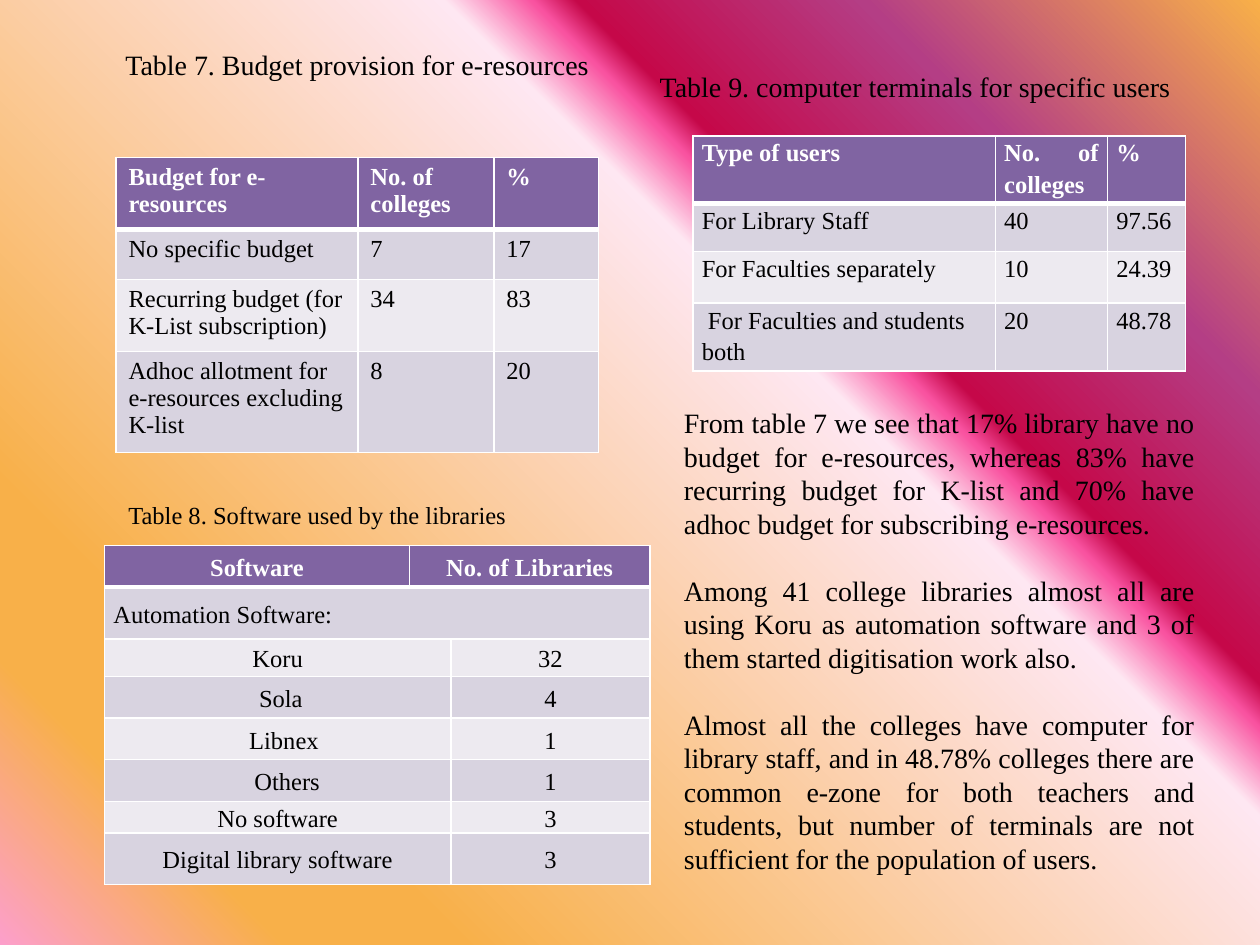
from lxml import etree
from pptx import Presentation
from pptx import util as u
from pptx.dml.color import RGBColor
from pptx.enum import text
from pptx.oxml import ns

Inches, Pt = u.Inches, u.Pt
LEFT, CENTER, JUSTIFY = text.PP_ALIGN.LEFT, text.PP_ALIGN.CENTER, text.PP_ALIGN.JUSTIFY

BLACK = RGBColor(0x00, 0x00, 0x00)
WHITE = RGBColor(0xFF, 0xFF, 0xFF)
PURPLE = RGBColor(0x80, 0x64, 0xA2)
BAND_DARK = RGBColor(0xD8, 0xD3, 0xE0)
BAND_LIGHT = RGBColor(0xED, 0xEA, 0xF0)
PINK = RGBColor(0xFC, 0x9F, 0xCB)
ORANGE = RGBColor(0xF8, 0xB0, 0x49)
PALE_PINK = RGBColor(0xFE, 0xE7, 0xF2)
HOT_PINK = RGBColor(0xF9, 0x52, 0xA0)
CRIMSON = RGBColor(0xC5, 0x08, 0x49)
MAGENTA = RGBColor(0xB4, 0x3E, 0x85)
BACKDROP = [(0, PINK), (13, ORANGE), (21, ORANGE), (63, PALE_PINK),
            (67, HOT_PINK), (69, CRIMSON), (82, MAGENTA), (100, ORANGE)]


def add_color(parent, color):
    etree.SubElement(parent, ns.qn("a:srgbClr"), val=str(color))


class SlideBuilder:
    font = "Times New Roman"

    def __init__(self, slide):
        self.slide = slide

    def background(self, stops, angle):
        fill = self.slide.background.fill
        fill.gradient()
        fill.gradient_angle = angle
        stop_list = next(self.slide.element.iter(ns.qn("a:gsLst")))
        for old_stop in list(stop_list):
            stop_list.remove(old_stop)
        for percent, color in stops:
            stop = etree.SubElement(stop_list, ns.qn("a:gs"), pos=str(percent * 1000))
            add_color(stop, color)

    def style(self, paragraph, size, align, color=BLACK, bold=False):
        paragraph.alignment = align
        for run in paragraph.runs:
            run.font.name, run.font.size = self.font, Pt(size)
            run.font.color.rgb, run.font.bold = color, bold

    def text_box(self, box, paragraphs, size=16, align=CENTER, wrap=True, gap=0):
        frame = self.slide.shapes.add_textbox(*map(Inches, box)).text_frame
        frame.word_wrap = wrap
        frame.auto_size = text.MSO_AUTO_SIZE.SHAPE_TO_FIT_TEXT
        frame.text = "\n".join(paragraphs)
        for index, paragraph in enumerate(frame.paragraphs):
            self.style(paragraph, size, align)
            if index:
                paragraph.space_before = Pt(gap)

    def borders(self, cell, bottom):
        properties = cell._tc.get_or_add_tcPr()
        for index, side in enumerate(("lnL", "lnR", "lnT", "lnB")):
            width = bottom if side == "lnB" else 1
            line = etree.Element(ns.qn("a:" + side), w=str(int(Pt(width))))
            add_color(etree.SubElement(line, ns.qn("a:solidFill")), WHITE)
            properties.insert(index, line)

    def table(self, left, top, widths, heights, rows, align=LEFT, spacing=None,
              compact=False, anchor=text.MSO_ANCHOR.TOP, merges=()):
        """Draw a banded table; None marks a cell covered by a merge."""
        table = self.slide.shapes.add_table(
            len(heights), len(widths), Inches(left), Inches(top),
            Inches(sum(widths)), Inches(sum(heights))).table
        for column, width in zip(table.columns, widths):
            column.width = Inches(width)
        for row, height in zip(table.rows, heights):
            row.height = Inches(height)
        for r, values in enumerate(rows):
            header = r == 0
            for c, value in enumerate(values):
                cell = table.cell(r, c)
                cell.fill.solid()
                cell.fill.fore_color.rgb = (
                    PURPLE if header else BAND_DARK if r % 2 else BAND_LIGHT)
                self.borders(cell, bottom=3 if header else 1)
                cell.vertical_anchor = anchor
                if compact:
                    cell.margin_left = cell.margin_right = Inches(0.07)
                    cell.margin_top = cell.margin_bottom = 0
                if value is None:
                    continue
                paragraph = cell.text_frame.paragraphs[0]
                paragraph.text = value
                paragraph.line_spacing = spacing
                self.style(paragraph, 14, align, WHITE if header else BLACK, header)
        for row, first, last in merges:
            table.cell(row, first).merge(table.cell(row, last))
        return table


def main():
    deck = Presentation()
    deck.slide_width, deck.slide_height = Inches(10), Inches(7.5)
    page = SlideBuilder(deck.slides.add_slide(deck.slide_layouts[6]))
    page.background(BACKDROP, angle=45)

    # Table 8: software
    software = [("Koru", "32"), ("Sola", "4"), ("Libnex", "1"), ("Others", "1"),
                ("No software", "3"), ("Digital library software", "3")]
    software_table = page.table(
        0.83, 4.33, [2.42, 0.19, 1.58],
        [0.33, 0.41, 0.3, 0.33, 0.33, 0.33, 0.25, 0.41],
        [("Software", "No. of Libraries", None), ("Automation Software:", None, None)]
        + [(name, None, count) for name, count in software],
        align=CENTER, spacing=1.15, compact=True, anchor=text.MSO_ANCHOR.MIDDLE,
        merges=[(0, 1, 2), (1, 0, 2)] + [(row, 0, 1) for row in range(2, 8)])
    software_table.cell(1, 0).text_frame.paragraphs[0].alignment = LEFT
    for step in (1, 2, 3):  # each of these names sits slightly further right
        software_table.cell(2 + step, 0).margin_left = Inches(0.07 + 0.05 * step)
    page.text_box((0.92, 3.92, 3.23, 0.34), ["Table 8. Software used by the libraries"],
                  size=14, align=LEFT, wrap=False)

    # Findings
    page.text_box((5.33, 3.17, 4.25, 4.14), [
        "From table 7 we see that 17% library have no budget for e-resources, whereas "
        "83% have recurring budget for K-list and 70% have adhoc budget for "
        "subscribing e-resources.",
        "Among 41 college libraries almost all are using Koru as automation software "
        "and 3 of them started digitisation work also.",
        "Almost all the colleges have computer for library staff, and in 48.78% "
        "colleges there are common e-zone for both teachers and students, but number "
        "of terminals are not sufficient for the population of users.",
    ], align=JUSTIFY, gap=19)

    # Table 7: budget
    page.table(0.92, 1.25, [1.92, 1.08, 0.83], [0.57, 0.4, 0.57, 0.8], [
        ("Budget for e-resources", "No. of colleges", "%"),
        ("No specific budget", "7", "17"),
        ("Recurring budget (for K-List subscription)", "34", "83"),
        ("Adhoc allotment for e-resources excluding K-list", "8", "20")])
    page.text_box((0.5, 0.33, 4.67, 0.37), ["Table 7. Budget provision for e-resources"])

    # Table 9: terminals
    page.text_box((5.08, 0.5, 4.42, 0.37),
                  ["Table 9. computer terminals for specific users "])
    users_table = page.table(5.5, 1.08, [2.4, 0.89, 0.62], [0.53, 0.38, 0.41, 0.53], [
        ("Type of users", "No. of colleges", "%"),
        ("For Library Staff", "40", "97.56"),
        ("For Faculties separately", "10", "24.39"),
        (" For Faculties and students both", "20", "48.78"),
    ], align=JUSTIFY, spacing=1.15, compact=True)
    users_table.cell(3, 0).text_frame.paragraphs[0].alignment = LEFT

    deck.save("out.pptx")


if __name__ == "__main__":
    main()
